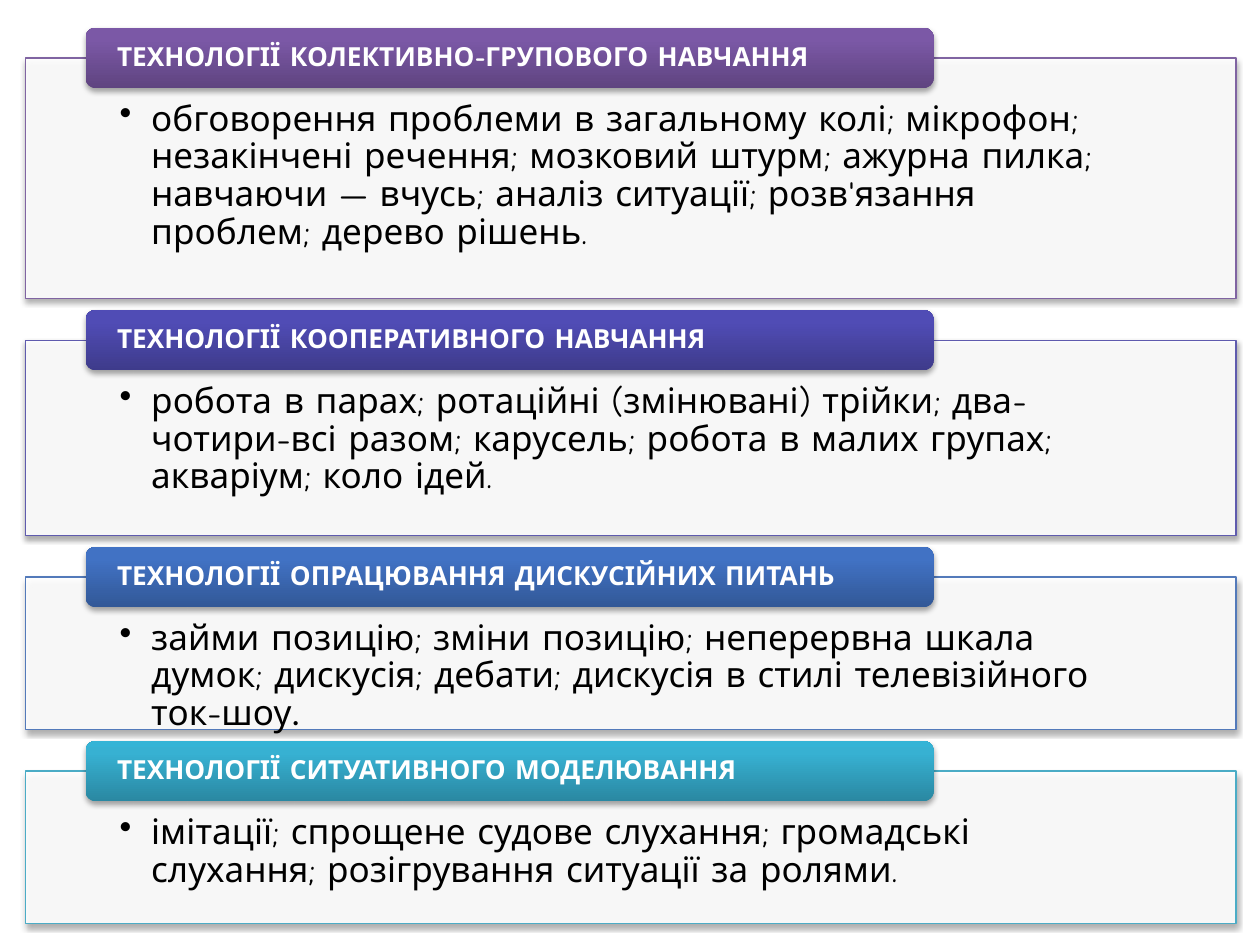
from lxml import etree
from pptx import Presentation
from pptx import util as u
from pptx.dml import color
from pptx.enum import shapes, text
from pptx.oxml import ns

FONT = "Comic Neue"
PANEL_LEFT, PANEL_WIDTH = 0.2, 9.61
HEADER_LEFT, HEADER_WIDTH, HEADER_HEIGHT = 0.68, 6.73, 0.48
FIRST_TOP, PANEL_GAP, HEADER_RISE = 0.46, 0.33, 0.24

SECTIONS = [
    (1.91, "8064A2", ("5F4480", "7B58A6", "7C57A8"),
     "ТЕХНОЛОГІЇ КОЛЕКТИВНО-ГРУПОВОГО НАВЧАННЯ",
     [("обговорення проблеми в загальному колі; мікрофон; незакінчені речення; "
       "мозковий штурм; ажурна пилка; навчаючи — вчусь; аналіз ситуації; "
       "розв'язання проблем; дерево рішень.", FONT)]),
    (1.55, "5F5BAE", ("3E3B8B", "504CB5", "4F4BB8"),
     "ТЕХНОЛОГІЇ КООПЕРАТИВНОГО НАВЧАННЯ",
     [("робота в парах; ротаційні (змінювані) трійки; два-чотири-всі разом; "
       "карусель; робота в малих групах; акваріум; коло ідей.", FONT)]),
    (1.21, "537ABA", ("325897", "4172C4", "3F72C7"),
     "ТЕХНОЛОГІЇ ОПРАЦЮВАННЯ ДИСКУСІЙНИХ ПИТАНЬ",
     [("займи позицію; зміни позицію; неперервна шкала думок; дискусія; дебати; "
       "дискусія в стилі телевізійного ток-шоу", FONT), (".", "Calibri")]),
    (1.21, "4BACC6", ("2A88A2", "37B1D2", "34B4D6"),
     "ТЕХНОЛОГІЇ СИТУАТИВНОГО МОДЕЛЮВАННЯ",
     [("імітації; спрощене судове слухання; громадські слухання; "
       "розігрування ситуації за ролями.", FONT)]),
]


def rgb(value):
    return color.RGBColor.from_string(value)


def add_child(parent, tag, **attributes):
    child = etree.SubElement(parent, ns.qn(tag))
    for name, value in attributes.items():
        child.set(name, str(value))
    return child


def add_shadowed_shape(slide, kind, box):
    shape = slide.shapes.add_shape(kind, *map(u.Inches, box))
    shape.shadow.inherit = False
    effects = shape._element.spPr.find(ns.qn("a:effectLst"))
    shadow = add_child(effects, "a:outerShdw", blurRad=u.Pt(3.1), dist=u.Pt(1.8),
                       dir=90 * 60000, rotWithShape=0)
    shadow_color = add_child(shadow, "a:srgbClr", val="000000")
    add_child(shadow_color, "a:alpha", val=35000)
    return shape


def add_panel(slide, box, line_color):
    shape = add_shadowed_shape(slide, shapes.MSO_SHAPE.RECTANGLE, box)
    shape.fill.solid()
    shape.fill.fore_color.rgb = rgb("FFFFFF")
    fill_color = shape._element.spPr.find(ns.qn("a:solidFill"))[0]
    add_child(fill_color, "a:alpha", val=90000)
    shape.line.color.rgb = rgb(line_color)
    shape.line.width = u.Pt(0.75)


def add_header(slide, box, gradient_colors):
    shape = add_shadowed_shape(slide, shapes.MSO_SHAPE.ROUNDED_RECTANGLE, box)
    shape.fill.gradient()
    shape.fill.gradient_angle = 90
    stops = shape._element.spPr.find(ns.qn("a:gradFill")).find(ns.qn("a:gsLst"))
    for stop in list(stops):
        stops.remove(stop)
    for position, value in zip((0, 80, 100), gradient_colors):
        stop = add_child(stops, "a:gs", pos=position * 1000)
        add_child(stop, "a:srgbClr", val=value)
    shape.line.fill.background()


def add_text(slide, box, margins, runs, size, text_color, bold=False, bullet=False):
    frame = slide.shapes.add_textbox(*map(u.Inches, box)).text_frame
    frame.word_wrap = True
    (frame.margin_left, frame.margin_top,
     frame.margin_right, frame.margin_bottom) = map(u.Inches, margins)
    frame.vertical_anchor = text.MSO_ANCHOR.TOP if bullet else text.MSO_ANCHOR.MIDDLE
    paragraph = frame.paragraphs[0]
    paragraph.line_spacing = 0.9
    if bullet:
        paragraph.level = 1
        properties = paragraph._p.get_or_add_pPr()
        properties.set("marL", str(u.Inches(0.25)))
        properties.set("indent", str(u.Inches(-0.25)))
        add_child(properties, "a:buChar", char="•")
    for words, font_name in runs:
        run = paragraph.add_run()
        run.text = words
        run.font.name = font_name
        run.font.size = u.Pt(size)
        run.font.bold = bold
        run.font.color.rgb = rgb(text_color)


def add_section(slide, top, height, line_color, gradient_colors, title, methods):
    panel = (PANEL_LEFT, top, PANEL_WIDTH, height)
    header = (HEADER_LEFT, top - HEADER_RISE, HEADER_WIDTH, HEADER_HEIGHT)
    add_panel(slide, panel, line_color)
    add_text(slide, panel, (0.75, 0.34, 0.75, 0.16), methods, 20, "000000", bullet=True)
    add_header(slide, header, gradient_colors)
    add_text(slide, header, (0.25, 0, 0.25, 0), [(title, FONT)], 15, "FFFFFF", bold=True)


def main():
    presentation = Presentation()
    presentation.slide_width = u.Inches(10)
    presentation.slide_height = u.Inches(7.5)
    slide = presentation.slides.add_slide(presentation.slide_layouts[6])
    top = FIRST_TOP
    for height, *details in SECTIONS:
        add_section(slide, top, height, *details)
        top += height + PANEL_GAP
    presentation.save("out.pptx")


if __name__ == "__main__":
    main()
